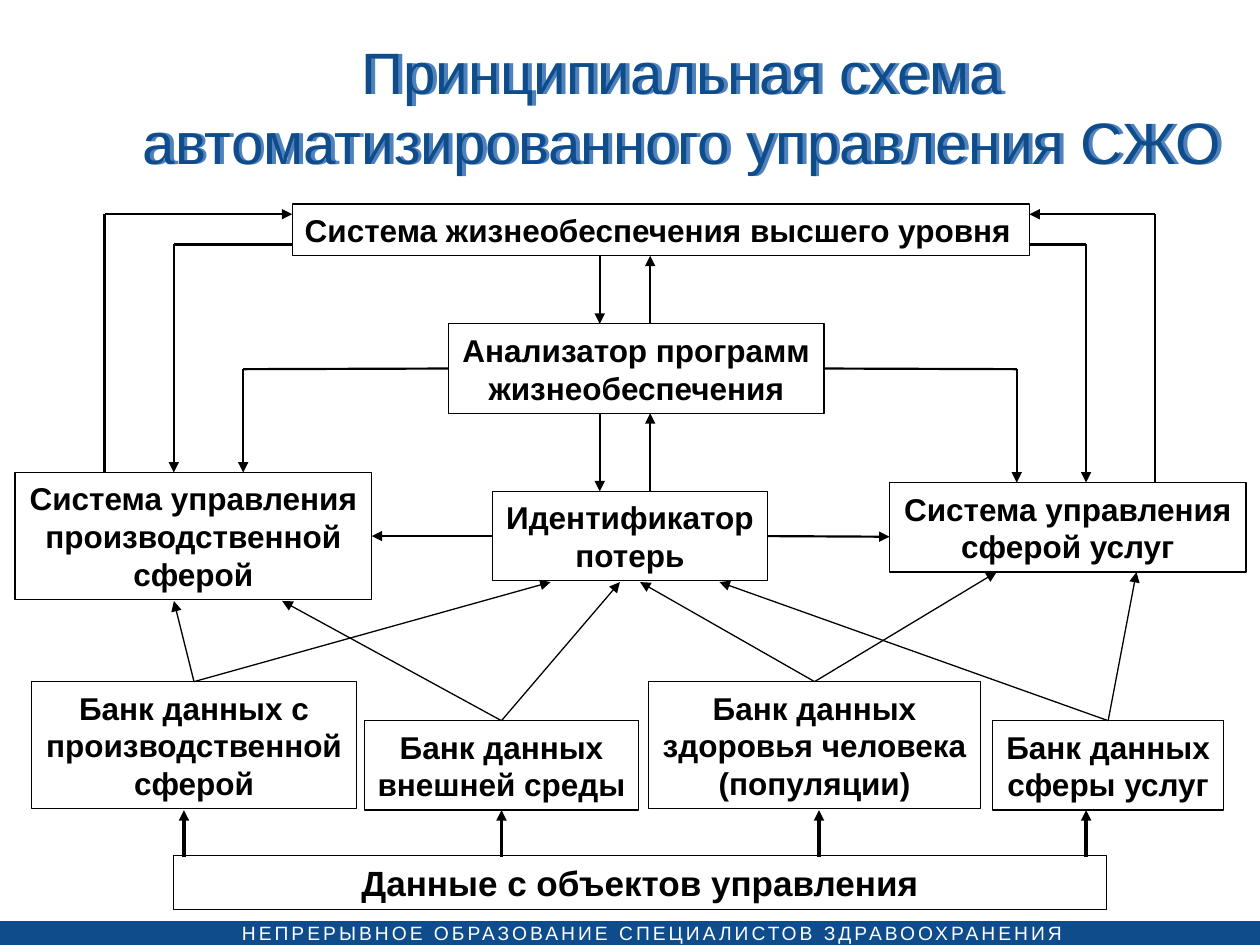
from itertools import pairwise

from lxml import etree
from pptx import Presentation
from pptx import util as u
from pptx.dml.color import RGBColor
from pptx.enum import shapes, text
from pptx.oxml.ns import qn

NAVY = RGBColor(0x0F, 0x4C, 0x8B)
SHADE = RGBColor(0x4F, 0x81, 0xBD)
BLACK = RGBColor(0, 0, 0)
WHITE = RGBColor(255, 255, 255)
TOP, LEFT, BOTTOM, RIGHT = range(4)

NODES = {
    "supreme": ("Система жизнеобеспечения высшего уровня", (2.32, 1.62, 5.85, 0.41)),
    "analyzer": ("Анализатор программ\nжизнеобеспечения", (3.56, 2.57, 2.98, 0.71)),
    "production": ("Система управления\nпроизводственной\nсферой", (0.12, 3.75, 2.83, 1.01)),
    "identifier": ("Идентификатор\nпотерь", (3.91, 3.9, 2.18, 0.71)),
    "services": ("Система управления\nсферой услуг", (7.06, 3.83, 2.83, 0.71)),
    "production_bank": ("Банк данных с\nпроизводственной\nсферой", (0.25, 5.41, 2.58, 1.01)),
    "environment_bank": ("Банк данных\nвнешней среды", (2.89, 5.72, 2.18, 0.71)),
    "health_bank": ("Банк данных\nздоровья человека\n(популяции)", (5.15, 5.41, 2.63, 1.01)),
    "services_bank": ("Банк данных\nсферы услуг", (7.88, 5.72, 1.83, 0.71)),
    "objects": ("Данные с объектов управления", (1.38, 6.79, 7.4, 0.43)),
}
BANK_TARGETS = {
    "production_bank": [(1.38, 4.77), (4.37, 4.62)],
    "environment_bank": [(2.24, 4.77), (4.92, 4.62)],
    "health_bank": [(5.08, 4.62), (7.91, 4.54)],
    "services_bank": [(9.02, 4.54), (5.71, 4.62)],
}


def write(frame, content, size, color, bold=False, align=text.PP_ALIGN.CENTER, spacing=0):
    """Fill a text frame with one paragraph per line of content."""
    for index, line in enumerate(content.split("\n")):
        paragraph = frame.paragraphs[0] if index == 0 else frame.add_paragraph()
        paragraph.alignment = align
        run = paragraph.add_run()
        run.text = line
        run.font.name, run.font.size = "Arial", u.Pt(size)
        run.font.bold, run.font.color.rgb = bold, color
        if spacing:
            run.font._element.set("spc", str(spacing))


def add_rectangle(slide, box, fill=None, line=None):
    """Add a flat rectangle with an optional fill and outline."""
    rectangle = slide.shapes.add_shape(shapes.MSO_SHAPE.RECTANGLE, *map(u.Inches, box))
    rectangle.shadow.inherit = False
    for paint, color in ((rectangle.fill, fill), (rectangle.line.fill, line)):
        if color is None:
            paint.background()
        else:
            paint.solid()
            paint.fore_color.rgb = color
    return rectangle


def add_node(slide, label, box, size=18, align=text.PP_ALIGN.CENTER):
    """Add one outlined block of the scheme."""
    node = add_rectangle(slide, box, line=BLACK)
    node.line.width = u.Pt(0.75)
    node.text_frame.word_wrap = False
    write(node.text_frame, label, size, BLACK, bold=True, align=align)
    return node


def add_link(slide, start, end, width=1.25, arrow=True, source=None, target=None):
    """Draw a line between points, joined to (node, side) pairs where given."""
    link = slide.shapes.add_connector(
        shapes.MSO_CONNECTOR.STRAIGHT, *map(u.Inches, (*start, *end)))
    if source:
        link.begin_connect(*source)
    if target:
        link.end_connect(*target)
    link.line.color.rgb = BLACK
    link.line.width = u.Pt(width)
    if arrow:
        etree.SubElement(link.line._get_or_add_ln(), qn("a:tailEnd"), type="triangle")
    etree.SubElement(link._element.spPr, qn("a:effectLst"))


def add_route(slide, points, source=None):
    """Draw a chain of lines with an arrowhead at its last point."""
    for start, end in pairwise(points):
        add_link(slide, start, end, arrow=end == points[-1],
                 source=source if start == points[0] else None)


def add_title(slide, box):
    """Place the heading with its offset shade."""
    title = slide.shapes.title
    title.left, title.top, title.width, title.height = map(u.Inches, box)
    title.text_frame.vertical_anchor = text.MSO_ANCHOR.MIDDLE
    write(title.text_frame, "Принципиальная схема автоматизированного управления СЖО", 33.3, NAVY)
    effects = etree.SubElement(title._element.spPr, qn("a:effectLst"))
    shade = etree.SubElement(effects, qn("a:outerShdw"), dist=str(u.Inches(0.03)), dir="0")
    etree.SubElement(shade, qn("a:srgbClr"), val=str(SHADE))


def add_footer(slide, box):
    """Draw the bottom band with its spaced caption."""
    left, top, width, height = box
    add_rectangle(slide, box, fill=NAVY)
    caption = slide.shapes.add_textbox(
        *map(u.Inches, (left + 1.96, top, width - 3.41, height - 0.03)))
    frame = caption.text_frame
    frame.margin_left = frame.margin_right = frame.margin_top = frame.margin_bottom = 0
    frame.word_wrap = True
    write(frame, "НЕПРЕРЫВНОЕ ОБРАЗОВАНИЕ СПЕЦИАЛИСТОВ ЗДРАВООХРАНЕНИЯ", 11, WHITE,
          align=text.PP_ALIGN.LEFT, spacing=170)


def add_nodes(slide):
    """Place all blocks and return them by name."""
    formats = {"supreme": {"align": text.PP_ALIGN.LEFT}, "objects": {"size": 20}}
    return {name: add_node(slide, label, box, **formats.get(name, {}))
            for name, (label, box) in NODES.items()}


def add_data_flows(slide, nodes):
    """Link the objects to the banks and the banks to the systems."""
    for x in (1.46, 3.98, 6.5, 8.62):
        add_link(slide, (x, 6.8), (x, 6.43), width=2)
    for bank, targets in BANK_TARGETS.items():
        for target in targets:
            add_link(slide, (0, 0), target, width=0.75, source=(nodes[bank], TOP))


def add_control_flows(slide, nodes):
    """Link the identifier, the analyzer, the systems and the highest level."""
    identifier, analyzer = nodes["identifier"], nodes["analyzer"]
    add_link(slide, (0, 0), (0, 0), source=(identifier, LEFT),
             target=(nodes["production"], RIGHT))
    add_link(slide, (0, 0), (7.06, 4.26), source=(identifier, RIGHT))
    for upper, lower in ((3.28, 3.9), (2.03, 2.57)):
        add_link(slide, (4.76, upper), (4.76, lower))
        add_link(slide, (5.16, lower), (5.16, upper))
    sides = ((LEFT, 0.83, 0.55, 3.56, 2.32, 3.75), (RIGHT, 9.17, -0.55, 6.54, 8.17, 3.83))
    for side, outer, step, analyzer_edge, supreme_edge, system_top in sides:
        middle, inner = outer + step, outer + 2 * step
        add_route(slide, [(analyzer_edge, 2.93), (inner, 2.93), (inner, system_top)],
                  source=(analyzer, side))
        add_route(slide, [(supreme_edge, 1.94), (middle, 1.94), (middle, system_top)])
        add_route(slide, [(outer, system_top), (outer, 1.7), (supreme_edge, 1.7)])


def main():
    """Build the slide and save it."""
    deck = Presentation()
    deck.slide_width, deck.slide_height = u.Inches(10), u.Inches(7.5)
    slide = deck.slides.add_slide(deck.slide_layouts[5])
    add_footer(slide, (-0.04, 7.31, 10.04, 0.22))
    add_title(slide, (0.83, 0.13, 9.17, 1.42))
    nodes = add_nodes(slide)
    add_data_flows(slide, nodes)
    add_control_flows(slide, nodes)
    deck.save("out.pptx")


if __name__ == "__main__":
    main()
